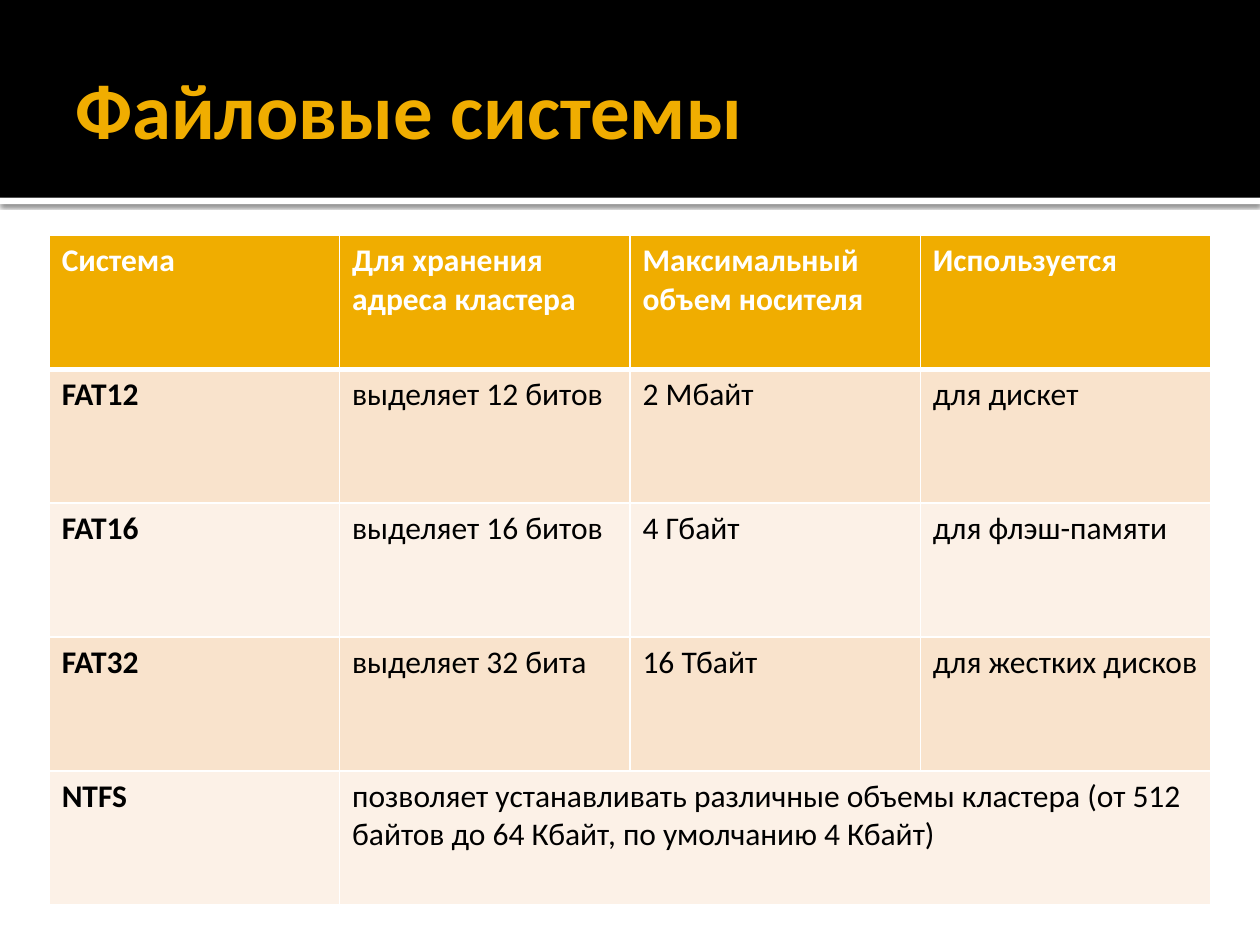
from lxml import etree
from pptx import Presentation
from pptx.dml.color import RGBColor
from pptx.enum.shapes import MSO_SHAPE
from pptx.enum.text import MSO_ANCHOR
from pptx.oxml.ns import qn
from pptx.util import Inches, Pt

RECTANGLE = MSO_SHAPE.RECTANGLE
MIDDLE = MSO_ANCHOR.MIDDLE
FONT = "Calibri"
COLORS = {
    "black": "000000",
    "white": "FFFFFF",
    "gold": "F0AD00",
    "band_dark": "F9E3CC",
    "band_light": "FCF1E7",
}
HEADERS = [
    "Система",
    "Для хранения адреса кластера",
    "Максимальный объем носителя",
    "Используется",
]
FILE_SYSTEMS = [
    ["FAT12", "выделяет 12 битов", "2 Мбайт", "для дискет"],
    ["FAT16", "выделяет 16 битов", "4 Гбайт", "для флэш-памяти"],
    ["FAT32", "выделяет 32 бита", "16 Тбайт", "для жестких дисков"],
    ["NTFS", "позволяет устанавливать различные объемы кластера "
             "(от 512 байтов до 64 Кбайт, по умолчанию 4 Кбайт)"],
]


def rgb(name):
    """Return the named colour."""
    return RGBColor.from_string(COLORS[name])


def style_text(paragraph, size, color, bold):
    """Set the font of a paragraph."""
    font = paragraph.font
    font.name, font.size, font.bold = FONT, Pt(size), bold
    font.color.rgb = rgb(color)


def add_band(slide, top, height, color):
    """Add a full-width band without outline or shadow."""
    band = slide.shapes.add_shape(RECTANGLE, 0, Inches(top), Inches(10), Inches(height))
    band.fill.solid()
    band.fill.fore_color.rgb = rgb(color)
    band.line.fill.background()
    band.shadow.inherit = False
    return band


def add_drop_shadow(band):
    """Cast a soft shadow straight down from a band."""
    effects = band._element.spPr.find(qn("a:effectLst"))
    shadow = etree.SubElement(effects, qn("a:outerShdw"), blurRad=str(Pt(2.5)),
                              dist=str(Pt(0.8)), dir="5400000", rotWithShape="0")
    tint = etree.SubElement(shadow, qn("a:srgbClr"), val=COLORS["black"])
    etree.SubElement(tint, qn("a:alpha"), val="60000")


def add_title(slide, wording):
    """Add the slide title over the black band."""
    title = slide.shapes.add_textbox(Inches(0.5), Inches(0.17), Inches(9), Inches(1.37))
    frame = title.text_frame
    frame.word_wrap = True
    frame.vertical_anchor = MIDDLE
    frame.margin_right = Inches(0.05)
    frame.text = wording
    style_text(frame.paragraphs[0], 45, "gold", True)


def set_borders(cell, top, bottom):
    """Draw white borders on the four sides of a cell."""
    properties = cell._tc.get_or_add_tcPr()
    widths = {"a:lnL": 1, "a:lnR": 1, "a:lnT": top, "a:lnB": bottom}
    for position, (side, width) in enumerate(widths.items()):
        line = etree.Element(qn(side), w=str(Pt(width)))
        fill = etree.SubElement(line, qn("a:solidFill"))
        etree.SubElement(fill, qn("a:srgbClr"), val=COLORS["white"])
        properties.insert(position, line)


def style_cell(cell, row, column):
    """Style a cell by its place in the table."""
    if row == 0:
        background, color = "gold", "white"
    else:
        background, color = "band_dark" if row % 2 else "band_light", "black"
    cell.fill.solid()
    cell.fill.fore_color.rgb = rgb(background)
    set_borders(cell, 3 if row == 1 else 1, 3 if row == 0 else 1)
    style_text(cell.text_frame.paragraphs[0], 18, color, row == 0 or column == 0)


def add_comparison(slide):
    """Add the table comparing the file systems."""
    rows = [HEADERS] + FILE_SYSTEMS
    table = slide.shapes.add_table(len(rows), len(HEADERS), Inches(0.39), Inches(1.87),
                                   Inches(9.22), Inches(5.31)).table
    for row, entries in enumerate(rows):
        for column, entry in enumerate(entries):
            table.cell(row, column).text = entry
        for column in range(len(HEADERS)):
            style_cell(table.cell(row, column), row, column)
        if len(entries) < len(HEADERS):
            table.cell(row, len(entries) - 1).merge(table.cell(row, len(HEADERS) - 1))


def main():
    """Build the slide and save it."""
    deck = Presentation()
    deck.slide_width, deck.slide_height = Inches(10), Inches(7.5)
    slide = deck.slides.add_slide(deck.slide_layouts[6])
    add_drop_shadow(add_band(slide, 1.57, 0.05, "white"))
    add_band(slide, 0, 1.57, "black")
    add_title(slide, "Файловые системы")
    add_comparison(slide)
    deck.save("out.pptx")


if __name__ == "__main__":
    main()
